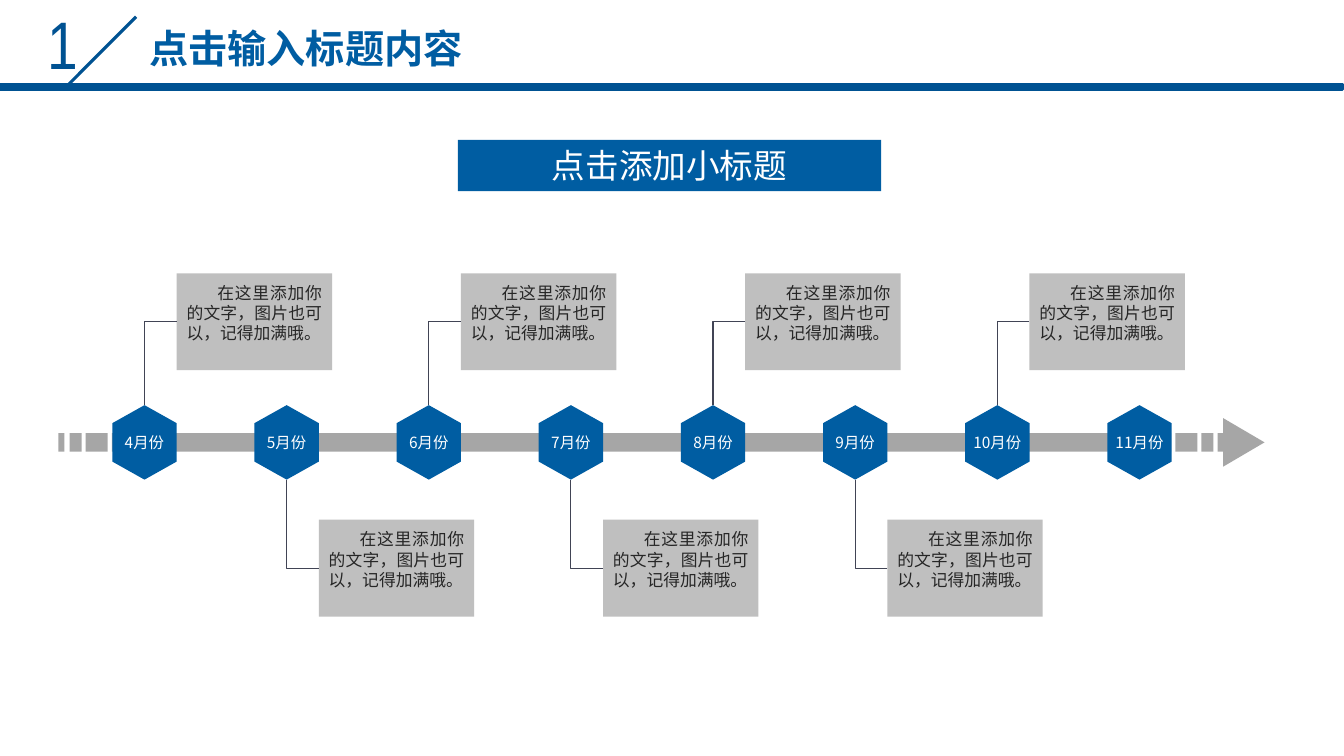
from lxml.etree import SubElement
from pptx import Presentation
from pptx.dml.color import RGBColor
from pptx.enum.shapes import MSO_CONNECTOR as CONN, MSO_SHAPE as SHAPE
from pptx.enum.text import MSO_ANCHOR as ANCHOR, PP_ALIGN as ALIGN
from pptx.oxml.ns import qn
from pptx.util import Pt

NAVY = RGBColor(0x00, 0x52, 0x92)
BLUE = RGBColor(0x00, 0x5D, 0xA2)
ARROW_GREY = RGBColor(0xA6, 0xA6, 0xA6)
CARD_GREY = RGBColor(0xBF, 0xBF, 0xBF)
LINK = RGBColor(0x41, 0x44, 0x55)
DARK = RGBColor(0x26, 0x26, 0x26)
WHITE = RGBColor(0xFF, 0xFF, 0xFF)

CJK = "Noto Sans CJK SC"
NARROW = "Arial Narrow"

AXIS_Y = 316
BAR_H = 13.2
FIRST_X, PITCH = 103.2, 101.53
HEX_LONG, HEX_SHORT = 53.2, 46
CARD_W, CARD_H = 111, 69.2
CARD_ABOVE_Y, CARD_BELOW_Y = 195.2, 371.2

MONTHS = [f"{n}月份" for n in range(4, 12)]
CARD_TEXT = "在这里添加你的文字，图片也可以，记得加满哦。"
BARS = [(41.8, 4.2), (49.7, 8.6), (61.2, 15.8), (79.9, 756.7),
        (839.6, 15.8), (858.2, 8.6), (869.8, 4.2)]


def write(sp, text, size, color, font=CJK, bold=False, align=ALIGN.LEFT,
          anchor=ANCHOR.TOP, wrap=True, top=3.6, indent=0):
    """Put one formatted paragraph in a shape; indent is for its first line."""
    tf = sp.text_frame
    tf.word_wrap = wrap
    tf.vertical_anchor = anchor
    tf.margin_left = tf.margin_right = Pt(7.2)
    tf.margin_top, tf.margin_bottom = Pt(top), Pt(3.6)
    p = tf.paragraphs[0]
    p.alignment = align
    if indent:
        p._p.get_or_add_pPr().set("indent", str(Pt(indent)))
    r = p.add_run()
    r.text = text
    r.font.size, r.font.bold, r.font.name = Pt(size), bold, font
    r.font.color.rgb = color
    SubElement(r._r.get_or_add_rPr(), qn("a:ea")).set("typeface", font)


def add_text(s, x, y, w, h, text, size, color, **fmt):
    sp = s.shapes.add_textbox(Pt(x), Pt(y), Pt(w), Pt(h))
    write(sp, text, size, color, **fmt)


def add_block(s, kind, x, y, w, h, color, rotation=0):
    sp = s.shapes.add_shape(kind, Pt(x), Pt(y), Pt(w), Pt(h))
    sp.shadow.inherit = False
    sp.fill.solid()
    sp.fill.fore_color.rgb = color
    sp.line.fill.background()
    sp.rotation = rotation
    return sp


def add_line(s, kind, x1, y1, x2, y2, color, width):
    c = s.shapes.add_connector(kind, Pt(x1), Pt(y1), Pt(x2), Pt(y2))
    c.line.color.rgb = color
    c.line.width = Pt(width)
    SubElement(c._element.spPr, qn("a:effectLst"))
    return c


def add_header(s):
    add_text(s, 26.6, -2.2, 36, 65.5, "1", 48, NAVY, font=NARROW, wrap=False)
    add_line(s, CONN.STRAIGHT, 97.2, 12, 49, 60.3, NAVY, 2.25)
    rule = add_block(s, SHAPE.RECTANGLE, 0, 60, 959, 3.8, NAVY)
    rule.line.color.rgb = NAVY
    rule.line.width = Pt(2)
    add_text(s, 89.3, 13.7, 258.5, 41, "点击输入标题内容", 28, BLUE,
             bold=True, align=ALIGN.CENTER)


def add_subtitle(s):
    sp = add_block(s, SHAPE.RECTANGLE, 327, 100, 302.4, 36.5, BLUE)
    write(sp, "点击添加小标题", 24, WHITE, align=ALIGN.CENTER,
          anchor=ANCHOR.MIDDLE)


def add_arrow(s):
    for x, w in BARS:
        add_block(s, SHAPE.RECTANGLE, x, AXIS_Y - BAR_H / 2, w, BAR_H,
                  ARROW_GREY)
    w, h = 34.6, 29.5
    add_block(s, SHAPE.ISOSCELES_TRIANGLE, 871.2, AXIS_Y - h / 2, w, h,
              ARROW_GREY, rotation=90)


def add_month(s, cx, month):
    sp = add_block(s, SHAPE.HEXAGON, cx - HEX_LONG / 2, AXIS_Y - HEX_SHORT / 2,
                   HEX_LONG, HEX_SHORT, BLUE, rotation=90)
    sp.adjustments[0] = 0.28
    w, h = 57, 21
    add_text(s, cx - w / 2, AXIS_Y - h / 2, w, h, month, 11, WHITE,
             align=ALIGN.CENTER, anchor=ANCHOR.MIDDLE, wrap=False)


def add_card(s, cx, above):
    """Add a text card beside a month, with an elbow line to its hexagon."""
    x = cx + HEX_SHORT / 2
    y = CARD_ABOVE_Y if above else CARD_BELOW_Y
    card = add_block(s, SHAPE.RECTANGLE, x, y, CARD_W, CARD_H, CARD_GREY)
    write(card, CARD_TEXT, 12, DARK, align=ALIGN.JUSTIFY, top=6.8, indent=22)
    tip_y = AXIS_Y + HEX_LONG / 2 * (-1 if above else 1)
    link = add_line(s, CONN.ELBOW, x, y + CARD_H / 2, cx, tip_y, LINK, 0.75)
    link._element.spPr.find(qn("a:prstGeom")).set("prst", "bentConnector2")
    link.begin_connect(card, 1)


def main():
    prs = Presentation()
    prs.slide_width, prs.slide_height = Pt(960), Pt(540)
    s = prs.slides.add_slide(prs.slide_layouts[6])
    add_header(s)
    add_subtitle(s)
    add_arrow(s)
    for i, month in enumerate(MONTHS):
        cx = FIRST_X + i * PITCH
        add_month(s, cx, month)
        if i < len(MONTHS) - 1:
            add_card(s, cx, above=i % 2 == 0)
    prs.save("out.pptx")


if __name__ == "__main__":
    main()
